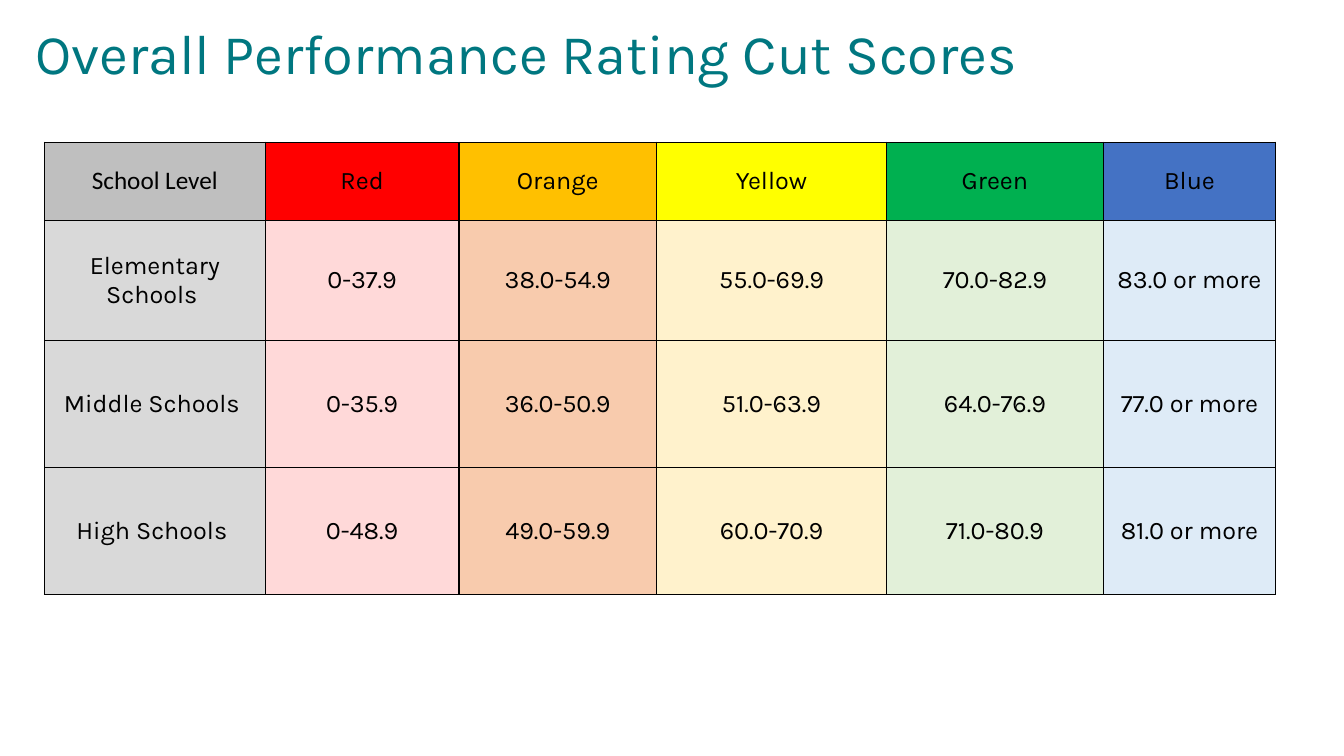
from lxml import etree
from pptx import Presentation
from pptx.dml import color
from pptx.enum import text
from pptx.oxml import ns
from pptx.util import Pt

LEVELS = ["School Level", "Elementary Schools ", "Middle Schools ", "High Schools "]
BANDS = [
    ("Red", "FF0000", "FFD9D9", ["0-37.9", "0-35.9", "0-48.9"]),
    ("Orange", "FFC000", "F8CBAD", ["38.0-54.9", "36.0-50.9", "49.0-59.9"]),
    ("Yellow", "FFFF00", "FFF2CC", ["55.0-69.9", "51.0-63.9", "60.0-70.9"]),
    ("Green", "00B050", "E2F0D9", ["70.0-82.9", "64.0-76.9", "71.0-80.9"]),
    ("Blue", "4472C4", "DEEBF7", ["83.0 or more", "77.0 or more", "81.0 or more"]),
]
COLUMN_WIDTHS = [157.8, 138.4, 141.1, 164.3, 154.9, 123.1]
ROW_HEIGHTS = [56, 85.7, 90.6, 90.6]


def paint(target, value):
    target.rgb = color.RGBColor.from_string(value)


def add_span(para, words, font, size, value):
    span = para.add_run()
    span.text = words
    span.font.name = font
    span.font.size = Pt(size)
    paint(span.font.color, value)


def add_borders(cell, value, width):
    properties = cell._tc.get_or_add_tcPr()
    for index, side in enumerate(["lnL", "lnR", "lnT", "lnB"]):
        line = etree.Element(ns.qn(f"a:{side}"), w=str(Pt(width)))
        fill = etree.SubElement(line, ns.qn("a:solidFill"))
        etree.SubElement(fill, ns.qn("a:srgbClr"), val=value)
        properties.insert(index, line)


def add_title(page, left, top, width, height):
    title = page.shapes.title
    title.left, title.top = Pt(left), Pt(top)
    title.width, title.height = Pt(width), Pt(height)
    frame = title.text_frame
    frame.word_wrap = True
    frame.auto_size = text.MSO_AUTO_SIZE.NONE
    frame.vertical_anchor = text.MSO_ANCHOR.MIDDLE
    para = frame.paragraphs[0]
    para.alignment = text.PP_ALIGN.LEFT
    para.line_spacing = 0.9
    para._p.get_or_add_pPr().set("marL", str(Pt(18)))
    add_span(para, "Overall Performance Rating Cut Scores", "Karla", 40, "007780")


def fill_cell(cell, words, fill, font, margin):
    cell.fill.solid()
    paint(cell.fill.fore_color, fill)
    add_borders(cell, "000000", 1)
    cell.margin_left = cell.margin_right = Pt(margin)
    cell.margin_top = cell.margin_bottom = Pt(margin)
    cell.vertical_anchor = text.MSO_ANCHOR.MIDDLE
    para = cell.text_frame.paragraphs[0]
    para.alignment = text.PP_ALIGN.CENTER
    add_span(para, words, font, 18, "000000")


def add_score_table(page, left, top):
    columns = [(LEVELS[0], "BFBFBF", "D9D9D9", LEVELS[1:])] + BANDS
    table = page.shapes.add_table(
        len(ROW_HEIGHTS), len(columns), Pt(left), Pt(top),
        Pt(sum(COLUMN_WIDTHS)), Pt(sum(ROW_HEIGHTS))).table
    table.horz_banding = False
    for row, height in zip(table.rows, ROW_HEIGHTS):
        row.height = Pt(height)
    for index, (heading, strong, pale, scores) in enumerate(columns):
        table.columns[index].width = Pt(COLUMN_WIDTHS[index])
        for row, words in enumerate([heading] + scores):
            fill = pale if row else strong
            font = "Calibri" if words == LEVELS[0] else "Karla"
            margin = 0 if heading == "Red" else 5
            fill_cell(table.cell(row, index), words, fill, font, margin)


def main():
    deck = Presentation()
    deck.slide_width, deck.slide_height = Pt(960), Pt(540)
    page = deck.slides.add_slide(deck.slide_layouts[5])
    add_title(page, 0, 0, 901.4, 80.6)
    add_score_table(page, 31.7, 101.5)
    deck.save("out.pptx")


if __name__ == "__main__":
    main()
